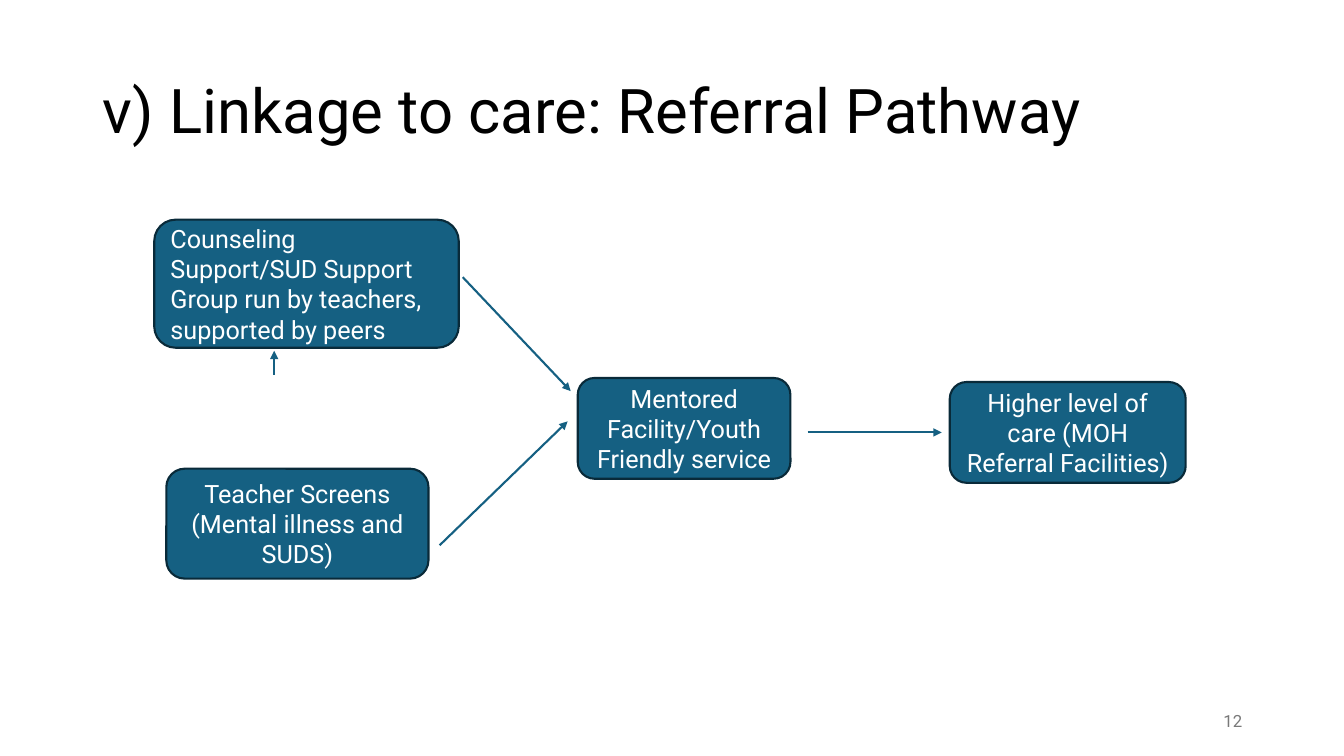
from lxml import etree
from pptx import Presentation
from pptx import util as u
from pptx.dml.color import RGBColor
from pptx.enum import shapes, text
from pptx.oxml.ns import qn

CELL = u.Inches(1)
COLUMNS, ROWS = 13.33, 7.5
FONT = "Roboto"
BLACK = RGBColor(0x00, 0x00, 0x00)
WHITE = RGBColor(0xFF, 0xFF, 0xFF)
GREY = RGBColor(0x79, 0x79, 0x79)
TEAL = RGBColor(0x15, 0x60, 0x82)
DARK_TEAL = RGBColor(0x09, 0x2A, 0x39)
LEFT, CENTER, RIGHT = text.PP_ALIGN.LEFT, text.PP_ALIGN.CENTER, text.PP_ALIGN.RIGHT

STEPS = [
    ("Mentored Facility/Youth Friendly service", (5.73, 3.75, 2.11, 1), CENTER),
    ("Counseling Support/SUD Support Group run by teachers, supported by peers",
     (1.53, 2.18, 3.02, 1.27), LEFT),
    ("Higher level of care (MOH Referral Facilities)", (9.42, 3.79, 2.34, 1), CENTER),
    ("Teacher Screens (Mental illness and SUDS)", (1.65, 4.65, 2.6, 1.09), CENTER),
]
ARROWS = [
    ((8.01, 4.29), (9.34, 4.29)),
    ((4.36, 5.41), (5.63, 4.18)),
    ((4.59, 2.75), (5.66, 3.88)),
    ((2.72, 3.72), (2.72, 3.48)),
]


def on_grid(*cells):
    """Convert grid columns and rows to slide lengths."""
    return [round(cell * CELL) for cell in cells]


def write(shape, words, size, color, align):
    """Put one vertically centred paragraph into a shape."""
    frame = shape.text_frame
    frame.word_wrap = True
    frame.auto_size = text.MSO_AUTO_SIZE.NONE
    frame.vertical_anchor = text.MSO_ANCHOR.MIDDLE
    para = frame.paragraphs[0]
    para.text = words
    para.alignment = align
    para.font.name = FONT
    para.font.size = u.Pt(size)
    para.font.color.rgb = color
    return para


def add_title(page, words):
    """Place and format the title placeholder."""
    title = page.shapes.title
    title.left, title.top, title.width, title.height = on_grid(0.92, 0.4, 11.5, 1.45)
    write(title, words, 44, BLACK, LEFT).line_spacing = 0.9


def add_page_number(page, number):
    """Add the page number at the lower right."""
    box = page.shapes.add_textbox(*on_grid(9.42, 6.95, 3, 0.4))
    write(box, number, 12, GREY, RIGHT)


def add_step(page, words, place, align):
    """Add one rounded box of the pathway."""
    box = page.shapes.add_shape(shapes.MSO_SHAPE.ROUNDED_RECTANGLE, *on_grid(*place))
    box.shadow.inherit = False
    box.fill.solid()
    box.fill.fore_color.rgb = TEAL
    box.line.color.rgb = DARK_TEAL
    box.line.width = u.Pt(1.5)
    write(box, words, 18, WHITE, align)


def add_arrow(page, start, end):
    """Add a straight line with a triangular head at its end."""
    arrow = page.shapes.add_connector(
        shapes.MSO_CONNECTOR.STRAIGHT, *on_grid(*start, *end))
    arrow.line.color.rgb = TEAL
    arrow.line.width = u.Pt(1.5)
    etree.SubElement(arrow.line._get_or_add_ln(), qn("a:tailEnd"), type="triangle")
    etree.SubElement(arrow._element.spPr, qn("a:effectLst"))


def main():
    """Build the referral pathway slide and save it."""
    deck = Presentation()
    deck.slide_width, deck.slide_height = on_grid(COLUMNS, ROWS)
    page = deck.slides.add_slide(deck.slide_layouts.get_by_name("Title Only"))
    add_title(page, "v) Linkage to care: Referral Pathway")
    add_page_number(page, "12")
    for words, place, align in STEPS:
        add_step(page, words, place, align)
    for start, end in ARROWS:
        add_arrow(page, start, end)
    deck.save("out.pptx")


if __name__ == "__main__":
    main()
